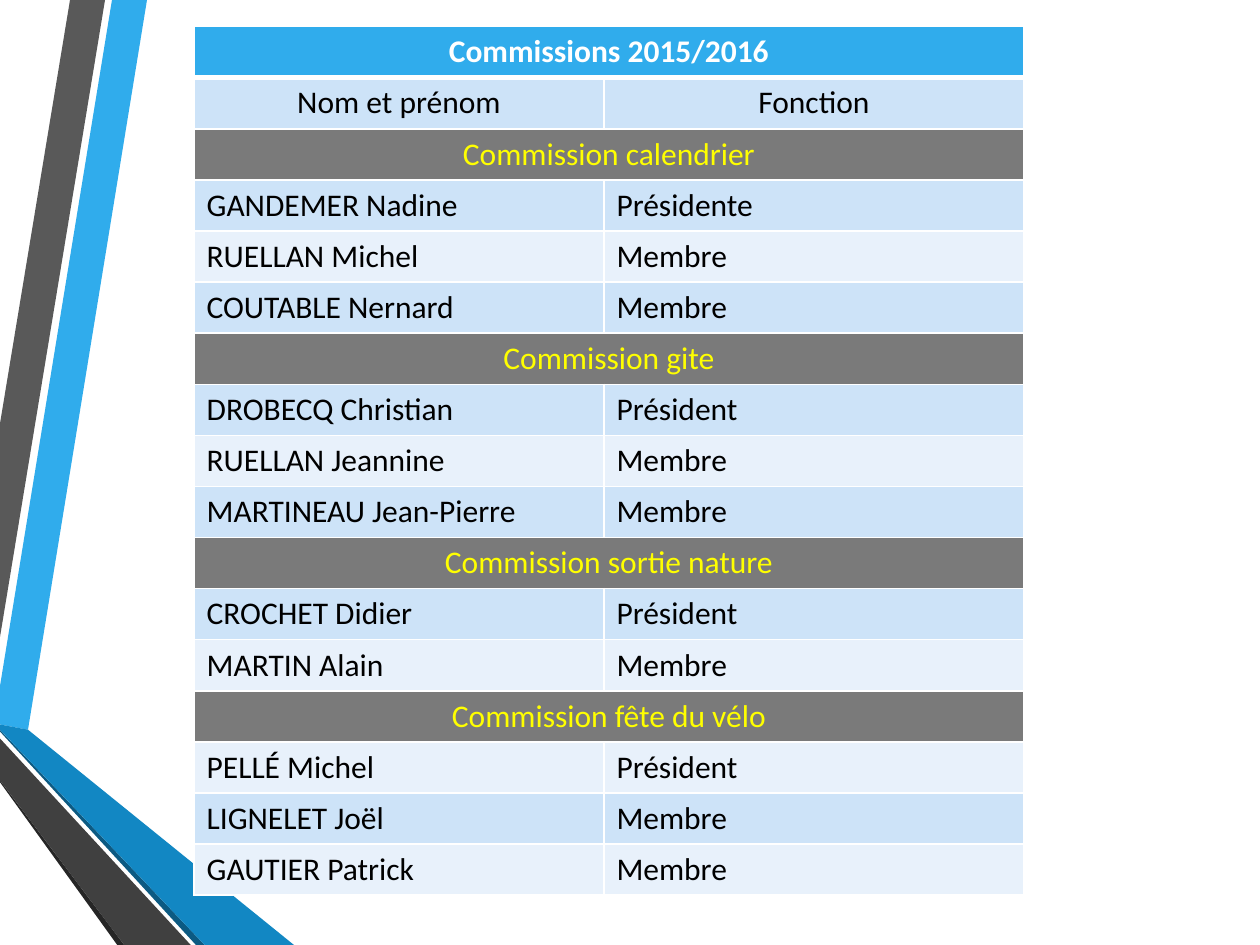
import pptx
import pptx.dml.color
import pptx.enum.text
import pptx.oxml.ns
import pptx.util
from lxml import etree

Pt = pptx.util.Pt
RGB = pptx.dml.color.RGBColor.from_string
CENTER = pptx.enum.text.PP_ALIGN.CENTER

THEME = {
    "font": "Calibri", "size": 18,
    "accent": "30ACEC", "accent_dark": "1287C3", "accent_shade": "0C5A82",
    "gray": "595959", "gray_dark": "404040", "gray_shade": "262626",
    "section": "7A7A7A", "band_odd": "CDE3F8", "band_even": "E8F1FB",
    "white": "FFFFFF", "black": "000000", "yellow": "FFFF00",
}

# Ribbons along the left edge, back to front, corners in points
RIBBONS = [
    ("accent", [(0, 391.5), (0, 414), (16, 417), (84.4, 0), (64, 0)]),
    ("gray", [(59.7, 0), (39.5, 0), (0, 242), (0, 364.5)]),
    ("gray_shade", [(0, 445.5), (0, 447), (67, 540), (71.2, 540)]),
    ("accent_shade", [(0, 416.7), (0, 417.7), (112.5, 540), (117.2, 540)]),
    ("accent_dark", [(0, 416.7), (117.2, 540), (168, 540), (16, 417), (0, 414)]),
    ("gray_dark", [(0, 445.5), (71.2, 540), (108.7, 540), (0, 422)]),
]

TITLE = "Commissions 2015/2016"
HEADINGS = ("Nom et prénom", "Fonction")
COMMISSIONS = {
    "Commission calendrier": [
        ("GANDEMER Nadine", "Présidente"),
        ("RUELLAN Michel", "Membre"),
        ("COUTABLE Nernard", "Membre")],
    "Commission gite": [
        ("DROBECQ Christian", "Président"),
        ("RUELLAN Jeannine", "Membre"),
        ("MARTINEAU Jean-Pierre", "Membre")],
    "Commission sortie nature": [
        ("CROCHET Didier", "Président"),
        ("MARTIN Alain", "Membre")],
    "Commission fête du vélo": [
        ("PELLÉ Michel", "Président"),
        ("LIGNELET Joël", "Membre"),
        ("GAUTIER Patrick", "Membre")],
}
COLUMN_WIDTHS = (234.2, 240)
ROW_HEIGHT = 29.2


def add_border(cell, side, width):
    line = etree.SubElement(cell._tc.get_or_add_tcPr(),
                            pptx.oxml.ns.qn(f"a:ln{side}"), w=str(Pt(width)))
    fill = etree.SubElement(line, pptx.oxml.ns.qn("a:solidFill"))
    etree.SubElement(fill, pptx.oxml.ns.qn("a:srgbClr"), val=THEME["white"])


deck = pptx.Presentation()
deck.slide_width, deck.slide_height = Pt(720), Pt(540)
page = deck.slides.add_slide(deck.slide_layouts[6])

for color, corners in RIBBONS:
    builder = page.shapes.build_freeform(*corners[0], scale=Pt(1))
    builder.add_line_segments(corners[1:], close=True)
    ribbon = builder.convert_to_shape()
    ribbon.shadow.inherit = False
    ribbon.fill.solid()
    ribbon.fill.fore_color.rgb = RGB(THEME[color])
    ribbon.line.fill.background()

rows = [("title", (TITLE,)), ("headings", HEADINGS)]
for commission, members in COMMISSIONS.items():
    rows.append(("section", (commission,)))
    rows.extend(("member", member) for member in members)

table = page.shapes.add_table(len(rows), 2, Pt(110.9), Pt(15.2),
                              Pt(sum(COLUMN_WIDTHS)), Pt(ROW_HEIGHT * len(rows))).table
for column, width in zip(table.columns, COLUMN_WIDTHS):
    column.width = Pt(width)

for index, (kind, texts) in enumerate(rows):
    table.rows[index].height = Pt(ROW_HEIGHT)
    band = "band_odd" if index % 2 else "band_even"
    fill_color, text_color = {"title": ("accent", "white"),
                              "section": ("section", "yellow")}.get(kind, (band, "black"))
    for cell in table.rows[index].cells:
        add_border(cell, "L", 1)
        add_border(cell, "R", 1)
        add_border(cell, "T", 3 if index == 1 else 1)
        add_border(cell, "B", 3 if index == 0 else 1)
        cell.fill.solid()
        cell.fill.fore_color.rgb = RGB(THEME[fill_color])
        cell.vertical_anchor = pptx.enum.text.MSO_ANCHOR.TOP
    if len(texts) == 1:
        table.cell(index, 0).merge(table.cell(index, 1))
    for position, text in enumerate(texts):
        para = table.cell(index, position).text_frame.paragraphs[0]
        para.text = text
        if kind != "member":
            para.alignment = CENTER
        para.font.name = THEME["font"]
        para.font.size = Pt(THEME["size"])
        para.font.bold = kind == "title"
        para.font.color.rgb = RGB(THEME[text_color])

deck.save("out.pptx")
